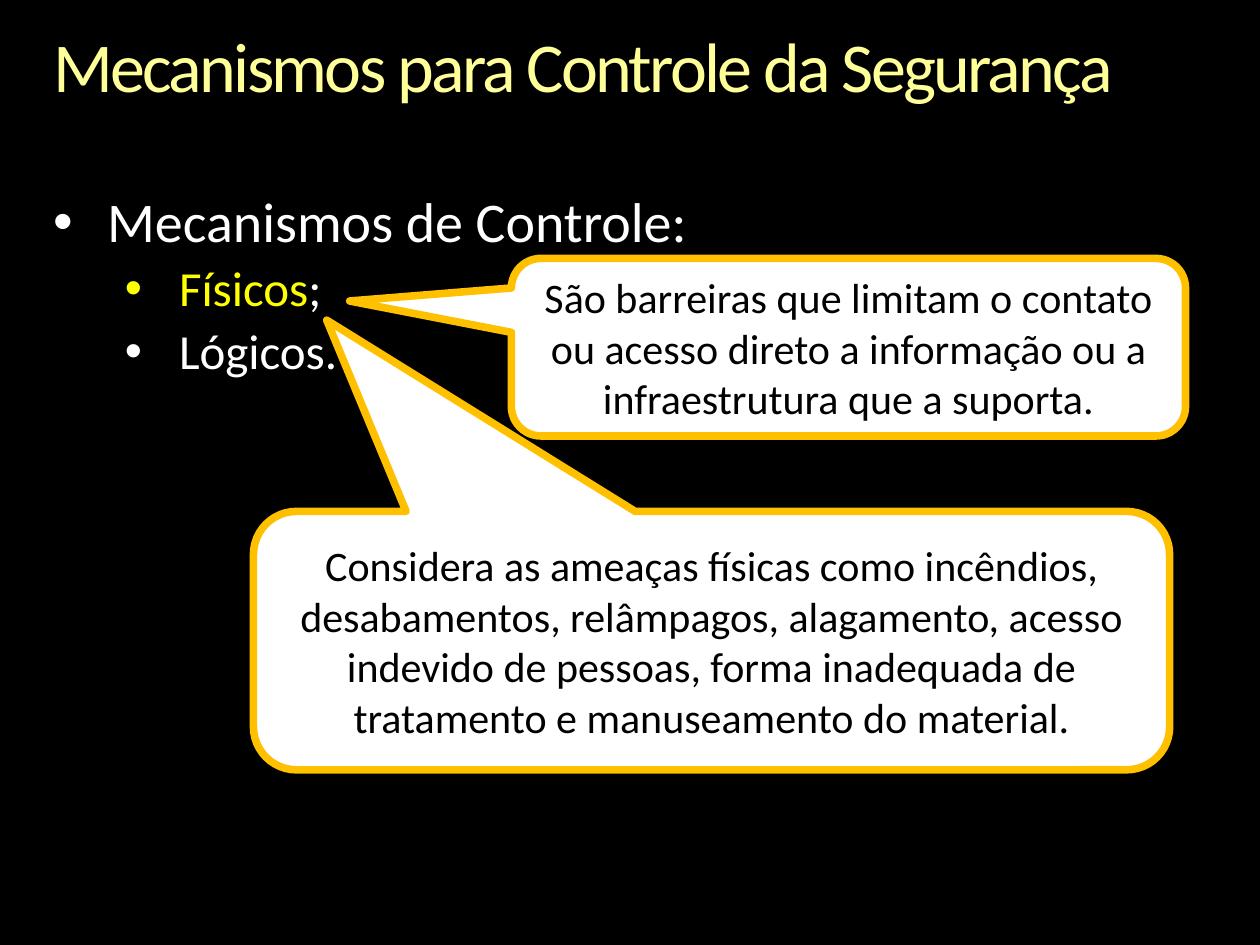
from dataclasses import dataclass

from lxml import etree
from pptx import Presentation
from pptx.dml.color import RGBColor
from pptx.enum.shapes import MSO_SHAPE
from pptx.enum.text import MSO_ANCHOR, PP_ALIGN
from pptx.oxml.ns import qn
from pptx.util import Cm, Pt

CALLOUT = MSO_SHAPE.ROUNDED_RECTANGULAR_CALLOUT
MIDDLE = MSO_ANCHOR.MIDDLE
CENTER = PP_ALIGN.CENTER


@dataclass(frozen=True)
class Theme:
    font: str = "Calibri"
    background: RGBColor = RGBColor(0x00, 0x00, 0x00)
    title: RGBColor = RGBColor(0xFF, 0xFF, 0x99)
    text: RGBColor = RGBColor(0xFF, 0xFF, 0xFF)
    highlight: RGBColor = RGBColor(0xFF, 0xFF, 0x00)
    callout_fill: RGBColor = RGBColor(0xFF, 0xFF, 0xFF)
    callout_line: RGBColor = RGBColor(0xFF, 0xC0, 0x00)
    callout_text: RGBColor = RGBColor(0x00, 0x00, 0x00)
    title_size: float = 40
    topic_size: float = 32
    item_size: float = 28
    callout_size: float = 24
    line_width: float = 4.33
    line_spacing: float = 0.9
    paragraph_gap: float = 5.6


THEME = Theme()


@dataclass(frozen=True)
class Box:
    left: float
    top: float
    width: float
    height: float

    def lengths(self) -> tuple:
        return Cm(self.left), Cm(self.top), Cm(self.width), Cm(self.height)


@dataclass(frozen=True)
class Bullet:
    runs: tuple  # pairs of text and colour
    size: float
    margin: float
    level: int = 0


@dataclass(frozen=True)
class Callout:
    box: Box
    tip: tuple  # offset from the centre, as a share of width and height
    text: str


BULLET_HANG = 1.09
TITLE_BOX = Box(1.07, 0.64, 23.29, 1.55)
BODY_BOX = Box(1.07, 3.91, 23.29, 3.86)

BULLETS = (
    Bullet((("Mecanismos de Controle:", THEME.text),), THEME.topic_size, BULLET_HANG),
    Bullet((("Físicos", THEME.highlight), (";", THEME.text)), THEME.item_size, 2.54, 1),
    Bullet((("Lógicos.", THEME.text),), THEME.item_size, 2.54, 1),
)

CALLOUTS = (
    Callout(
        Box(10.31, 5.21, 13.59, 3.58),
        (-0.74, -0.26),
        "São barreiras que limitam o contato ou acesso direto a informação "
        "ou a infraestrutura que a suporta.",
    ),
    Callout(
        Box(5.11, 10.31, 18.47, 5.21),
        (-0.42, -1.24),
        "Considera as ameaças físicas como incêndios, desabamentos, relâmpagos, "
        "alagamento, acesso indevido de pessoas, forma inadequada de tratamento "
        "e manuseamento do material.",
    ),
)


def add_run(paragraph, text: str, size: float, color: RGBColor):
    run = paragraph.add_run()
    run.text = text
    run.font.name = THEME.font
    run.font.size = Pt(size)
    run.font.color.rgb = color
    return run


def add_text_frame(slide, box: Box):
    frame = slide.shapes.add_textbox(*box.lengths()).text_frame
    frame.word_wrap = True
    frame.margin_left = frame.margin_right = 0
    frame.margin_top = frame.margin_bottom = 0
    return frame


def add_title(slide, text: str) -> None:
    paragraph = add_text_frame(slide, TITLE_BOX).paragraphs[0]
    paragraph.line_spacing = THEME.line_spacing
    run = add_run(paragraph, text, THEME.title_size, THEME.title)
    run.font._element.set("spc", "-150")


def set_bullet(paragraph, margin: float) -> None:
    properties = paragraph._p.get_or_add_pPr()
    properties.set("marL", str(Cm(margin)))
    properties.set("indent", str(-Cm(BULLET_HANG)))
    etree.SubElement(properties, qn("a:buFont")).set("typeface", "Arial")
    etree.SubElement(properties, qn("a:buChar")).set("char", "•")


def add_bullets(slide, bullets: tuple) -> None:
    frame = add_text_frame(slide, BODY_BOX)
    for index, bullet in enumerate(bullets):
        paragraph = frame.add_paragraph() if index else frame.paragraphs[0]
        set_bullet(paragraph, bullet.margin)
        paragraph.level = bullet.level
        paragraph.line_spacing = THEME.line_spacing
        if index:
            paragraph.space_before = Pt(THEME.paragraph_gap)
        for text, color in bullet.runs:
            add_run(paragraph, text, bullet.size, color)


def add_callout(slide, callout: Callout) -> None:
    shape = slide.shapes.add_shape(CALLOUT, *callout.box.lengths())
    shape.adjustments[0], shape.adjustments[1] = callout.tip
    shape.shadow.inherit = False
    shape.fill.solid()
    shape.fill.fore_color.rgb = THEME.callout_fill
    shape.line.color.rgb = THEME.callout_line
    shape.line.width = Pt(THEME.line_width)
    frame = shape.text_frame
    frame.word_wrap = True
    frame.vertical_anchor = MIDDLE
    paragraph = frame.paragraphs[0]
    paragraph.alignment = CENTER
    add_run(paragraph, callout.text, THEME.callout_size, THEME.callout_text)


def main() -> None:
    presentation = Presentation()
    presentation.slide_width = Cm(25.4)
    presentation.slide_height = Cm(19.05)
    slide = presentation.slides.add_slide(presentation.slide_layouts[6])

    # Background
    slide.background.fill.solid()
    slide.background.fill.fore_color.rgb = THEME.background

    # Title and bullet list
    add_title(slide, "Mecanismos para Controle da Segurança")
    add_bullets(slide, BULLETS)

    # Explanations pointing at the physical mechanisms
    for callout in CALLOUTS:
        add_callout(slide, callout)

    presentation.save("out.pptx")


if __name__ == "__main__":
    main()
